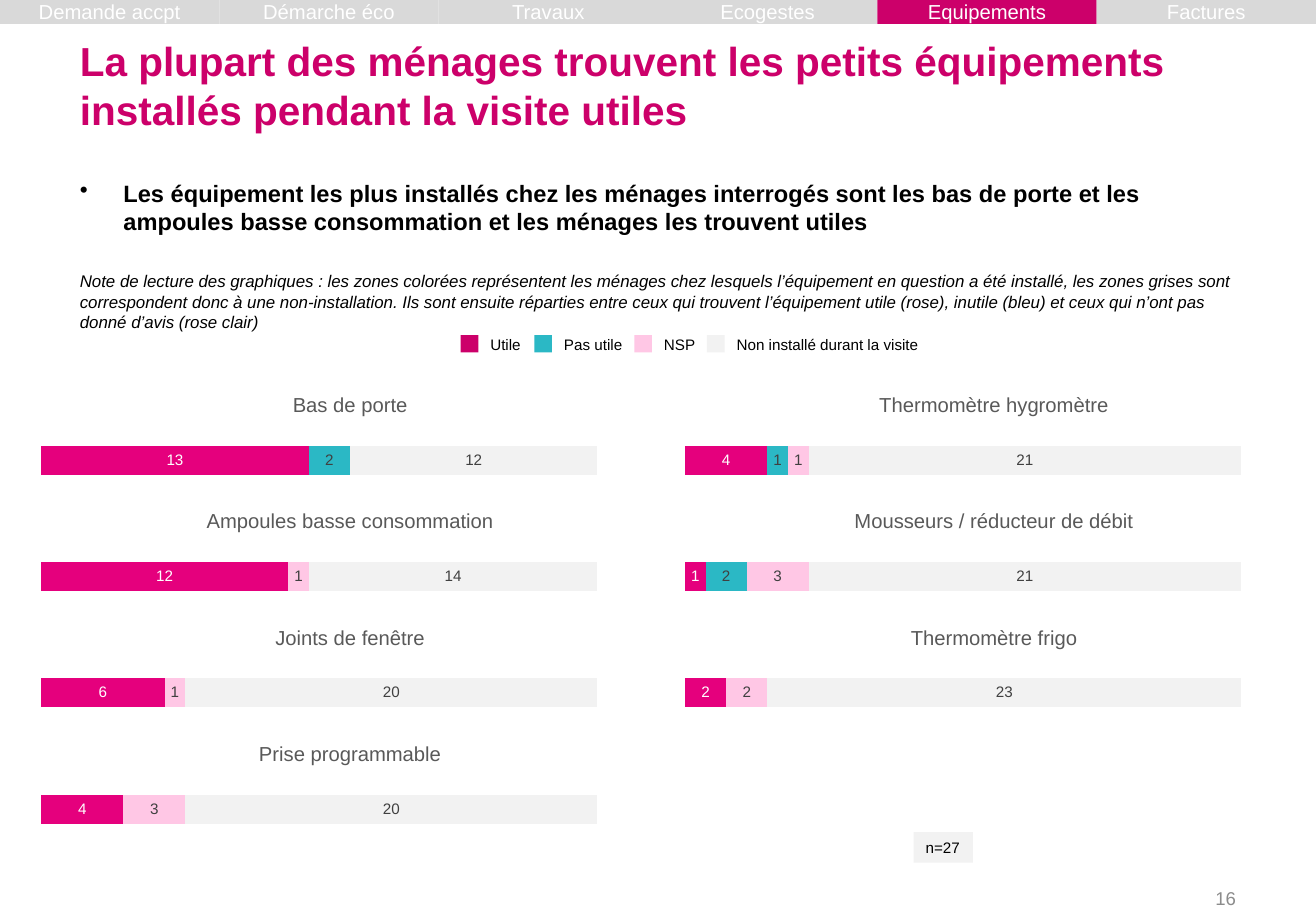
from dataclasses import dataclass

from lxml import etree
from pptx import Presentation
from pptx.chart.data import CategoryChartData
from pptx.dml.color import RGBColor
from pptx.enum.chart import XL_CHART_TYPE, XL_LABEL_POSITION
from pptx.enum.shapes import MSO_SHAPE
from pptx.enum.text import MSO_ANCHOR, PP_ALIGN
from pptx.oxml.ns import qn
from pptx.util import Cm, Pt

BAR_STACKED = XL_CHART_TYPE.BAR_STACKED
LABEL_CENTER = XL_LABEL_POSITION.CENTER
RECTANGLE = MSO_SHAPE.RECTANGLE
TOP, MIDDLE, BOTTOM = MSO_ANCHOR.TOP, MSO_ANCHOR.MIDDLE, MSO_ANCHOR.BOTTOM
LEFT, CENTER, RIGHT = PP_ALIGN.LEFT, PP_ALIGN.CENTER, PP_ALIGN.RIGHT

# Content
TABS = ["Demande accpt", "Démarche éco", "Travaux", "Ecogestes", "Equipements", "Factures"]
ACTIVE_TAB = "Equipements"
TITLE = "La plupart des ménages trouvent les petits équipements installés pendant la visite utiles"
KEY_POINT = (
    "Les équipement les plus installés chez les ménages interrogés sont les bas de porte "
    "et les ampoules basse consommation et les ménages les trouvent utiles"
)
READING_NOTE = (
    "Note de lecture des graphiques : les zones colorées représentent les ménages chez lesquels "
    "l’équipement en question a été installé, les zones grises sont correspondent donc à une "
    "non-installation. Ils sont ensuite réparties entre ceux qui trouvent l’équipement utile (rose), "
    "inutile (bleu) et ceux qui n’ont pas donné d’avis (rose clair)"
)
SAMPLE = "n=27"
PAGE_NUMBER = "16"
# Answer, legend colour, bar colour, value colour, label width in cm
ANSWERS = [
    ("Utile", "CC006A", "E5007D", "FFFFFF", 1.17),
    ("Pas utile", "2BB8C5", "2BB8C5", "404040", 1.72),
    ("NSP", "FFC7E5", "FFC7E5", "404040", 1.15),
    ("Non installé durant la visite", "F2F2F2", "F2F2F2", "404040", 4.5),
]
# One list per column; values follow the order of ANSWERS, 0 where nobody answered
CHART_COLUMNS = [
    [
        ("Bas de porte", (13, 2, 0, 12)),
        ("Ampoules basse consommation", (12, 0, 1, 14)),
        ("Joints de fenêtre", (6, 0, 1, 20)),
        ("Prise programmable", (4, 0, 3, 20)),
    ],
    [
        ("Thermomètre hygromètre", (4, 1, 1, 21)),
        ("Mousseurs / réducteur de débit", (1, 2, 3, 21)),
        ("Thermomètre frigo", (2, 0, 2, 23)),
    ],
]


@dataclass(frozen=True)
class Theme:
    font: str = "Arial"
    accent: str = "CC006A"
    white: str = "FFFFFF"
    black: str = "000000"
    tab: str = "D9D9D9"
    pale: str = "F2F2F2"
    number: str = "8C8C8C"
    chart_title: str = "595959"
    title_size: float = 24
    point_size: float = 14
    heading_size: float = 12
    number_size: float = 11
    note_size: float = 10
    label_size: float = 9


THEME = Theme()
PAGE_WIDTH, PAGE_HEIGHT = 27.51, 19.05
PLOT = {"x": 0.02, "y": 0.37, "w": 0.96, "h": 0.61}
AXIS_MAXIMUM = 30


def style_font(font, size, color, bold=False, italic=False):
    font.name, font.size = THEME.font, Pt(size)
    font.bold, font.italic = bold, italic
    font.color.rgb = RGBColor.from_string(color)


def write(paragraph, text, size=THEME.label_size, color=THEME.black, bold=False,
          italic=False, align=LEFT, before=0, bullet_indent=None):
    if bullet_indent:
        properties = paragraph._p.get_or_add_pPr()
        properties.set("marL", str(Cm(bullet_indent)))
        properties.set("indent", str(-Cm(bullet_indent)))
        etree.SubElement(properties, qn("a:buChar")).set("char", "•")
    paragraph.alignment = align
    if before:
        paragraph.space_before = Pt(before)
    span = paragraph.add_run()
    span.text = text
    style_font(span.font, size, color, bold, italic)


def set_frame(shape, inset_x=0.25, inset_right=None, inset_y=0.13, anchor=TOP, wrap=True):
    frame = shape.text_frame
    frame.word_wrap, frame.vertical_anchor = wrap, anchor
    frame.margin_left = Cm(inset_x)
    frame.margin_right = Cm(inset_x if inset_right is None else inset_right)
    frame.margin_top = frame.margin_bottom = Cm(inset_y)
    return frame.paragraphs[0]


def add_box(page, left, top, width, height, **frame_format):
    box = page.shapes.add_textbox(Cm(left), Cm(top), Cm(width), Cm(height))
    return set_frame(box, **frame_format), box


def add_rectangle(page, left, top, width, height, color):
    shape = page.shapes.add_shape(RECTANGLE, Cm(left), Cm(top), Cm(width), Cm(height))
    shape.shadow.inherit = False
    shape.fill.solid()
    shape.fill.fore_color.rgb = RGBColor.from_string(color)
    shape.line.fill.background()
    return shape


def place_plot(chart):
    plot_area = chart._chartSpace.chart.plotArea
    for old_layout in plot_area.findall(qn("c:layout")):
        plot_area.remove(old_layout)
    layout = etree.Element(qn("c:layout"))
    manual = etree.SubElement(layout, qn("c:manualLayout"))
    settings = {"layoutTarget": "inner", "xMode": "edge", "yMode": "edge", **PLOT}
    for name, value in settings.items():
        etree.SubElement(manual, qn(f"c:{name}")).set("val", str(value))
    plot_area.insert(0, layout)


def add_bar(page, left, top, width, height, title, values):
    shown = [(answer, value) for answer, value in zip(ANSWERS, values) if value]
    data = CategoryChartData(number_format="0")
    data.categories = ["1"]
    for answer, value in shown:
        data.add_series(answer[0], [value])
    chart = page.shapes.add_chart(
        BAR_STACKED, Cm(left), Cm(top), Cm(width), Cm(height), data).chart
    style_font(chart.font, THEME.note_size, THEME.black)
    chart.has_legend = False
    chart.has_title = True
    write(chart.chart_title.text_frame.paragraphs[0], title, align=CENTER,
          size=THEME.heading_size, color=THEME.chart_title)
    chart.chart_title.include_in_layout = False
    for axis in (chart.category_axis, chart.value_axis):
        axis.visible = False
        axis.has_major_gridlines = False
    chart.value_axis.minimum_scale = 0
    chart.value_axis.maximum_scale = AXIS_MAXIMUM
    plot = chart.plots[0]
    plot.gap_width, plot.overlap, plot.vary_by_categories = 150, 100, False
    for series, (answer, _) in zip(plot.series, shown):
        series.format.fill.solid()
        series.format.fill.fore_color.rgb = RGBColor.from_string(answer[2])
        labels = series.data_labels
        labels.show_value = True
        labels.position = LABEL_CENTER
        labels.number_format, labels.number_format_is_linked = "0", False
        style_font(labels.font, THEME.label_size, answer[3])
    place_plot(chart)


def main():
    deck = Presentation()
    deck.slide_width, deck.slide_height = Cm(PAGE_WIDTH), Cm(PAGE_HEIGHT)
    page = deck.slides.add_slide(deck.slide_layouts[6])

    # Page number, title and body
    para, _ = add_box(page, 19.71, 18.4, 6.43, 0.76, inset_x=0.3, anchor=MIDDLE)
    write(para, PAGE_NUMBER, size=THEME.number_size, color=THEME.number, align=RIGHT)
    para, _ = add_box(page, 1.37, 0.53, 24.77, 2.39, inset_x=0.3, anchor=BOTTOM)
    write(para, TITLE, size=THEME.title_size, color=THEME.accent, bold=True)
    para, body = add_box(page, 1.37, 3.61, 24.77, 3.58, inset_x=0.3)
    write(para, KEY_POINT, size=THEME.point_size, bold=True, bullet_indent=0.91)
    write(body.text_frame.add_paragraph(), READING_NOTE, size=THEME.note_size,
          italic=True, before=21)

    # Sample size
    sample = add_rectangle(page, 19.1, 17.4, 1.24, 0.64, THEME.pale)
    write(set_frame(sample, wrap=False), SAMPLE)

    # Legend
    left, swatch = 9.63, 0.37
    for name, color, _, _, label_width in ANSWERS:
        add_rectangle(page, left, 7.01, swatch, 0.36, color)
        para, _ = add_box(page, left + swatch, 6.88, label_width, 0.64, inset_right=0)
        write(para, name)
        left += swatch + label_width

    # Charts
    chart_width, chart_height, row_step = 13.46, 2.49, 2.43
    for column, charts in enumerate(CHART_COLUMNS):
        for row, (title, values) in enumerate(charts):
            add_bar(page, 0.59 + column * chart_width, 7.95 + row * row_step,
                    chart_width, chart_height, title, values)

    # Navigation tabs
    tab_width = PAGE_WIDTH / len(TABS)
    for index, name in enumerate(TABS):
        color = THEME.accent if name == ACTIVE_TAB else THEME.tab
        tab = add_rectangle(page, index * tab_width, 0, tab_width, 0.5, color)
        write(set_frame(tab, inset_x=0, inset_y=0, anchor=MIDDLE), name,
              size=THEME.heading_size, color=THEME.white, align=CENTER)

    deck.save("out.pptx")


if __name__ == "__main__":
    main()
